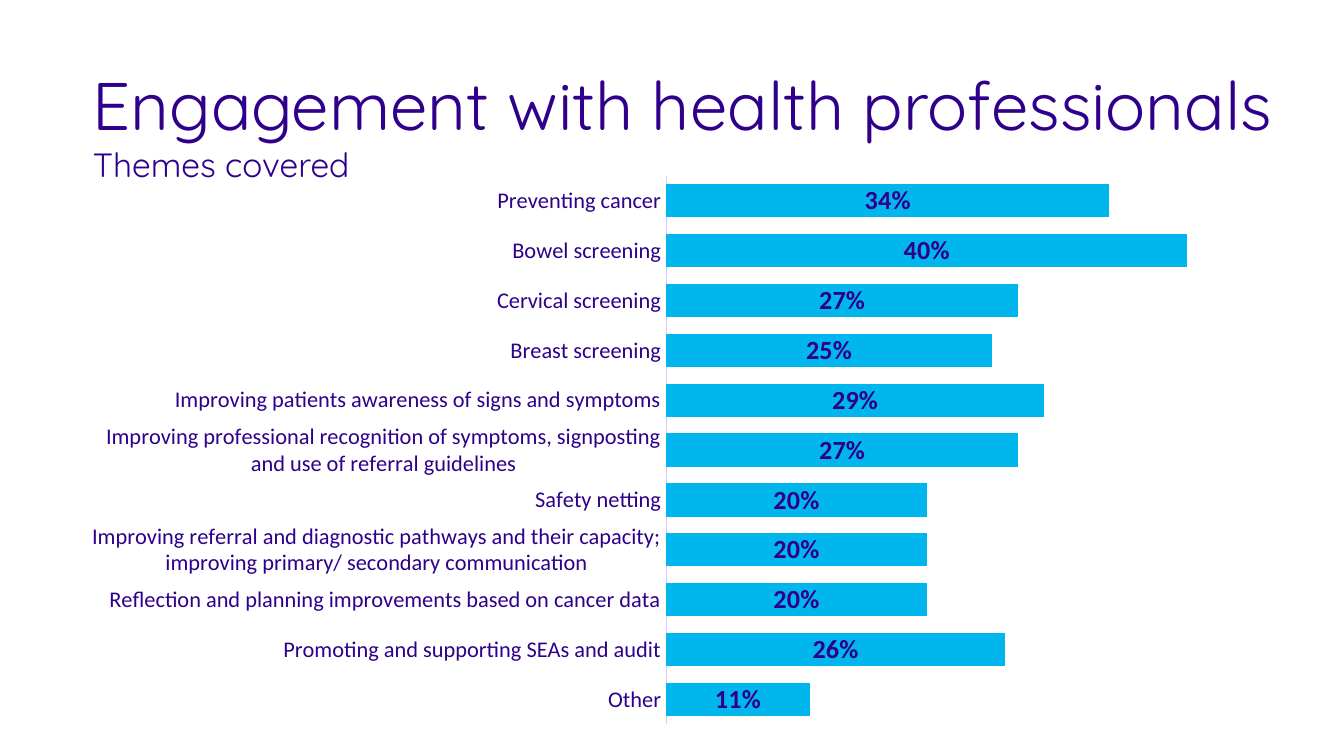
import pptx
import pptx.chart.data
import pptx.dml.color
import pptx.enum.chart
import pptx.enum.text
import pptx.oxml
import pptx.oxml.ns
import pptx.util
from dataclasses import dataclass
from pptx.util import Inches


@dataclass(frozen=True)
class Theme:
    ink: str = "2E008B"
    bar: str = "00B6ED"
    axis: str = "DAC7FF"
    heading_font: str = "Quicksand"
    chart_font: str = "Calibri"
    heading_size: int = 36
    subheading_size: int = 18
    chart_size: int = 11
    category_size: int = 12
    value_size: int = 14


theme = Theme()


def rgb(value):
    return pptx.dml.color.RGBColor.from_string(value)


def style_font(font, name, size, bold=False):
    font.name = name
    font.size = pptx.util.Pt(size)
    font.bold = bold
    font.color.rgb = rgb(theme.ink)


theme_shares = [
    ("Preventing cancer", 0.34),
    ("Bowel screening", 0.40),
    ("Cervical screening", 0.27),
    ("Breast screening", 0.25),
    ("Improving patients awareness of signs and symptoms", 0.29),
    ("Improving professional recognition of symptoms, signposting and use of referral guidelines", 0.27),
    ("Safety netting", 0.20),
    ("Improving referral and diagnostic pathways and their capacity; "
     "improving primary/ secondary communication", 0.20),
    ("Reflection and planning improvements based on cancer data", 0.20),
    ("Promoting and supporting SEAs and audit", 0.26),
    ("Other", 0.11),
]

# Widescreen slide, 16:9
deck = pptx.Presentation()
deck.slide_width = Inches(10)
deck.slide_height = Inches(10 * 9 / 16)
slide = deck.slides.add_slide(deck.slide_layouts[5])

# Heading: the smaller second part wraps onto its own line
heading = slide.shapes.title
heading.left, heading.top = Inches(0.59), Inches(0.42)
heading.width, heading.height = Inches(9.3), Inches(0.74)
frame = heading.text_frame
frame.word_wrap = True
frame.auto_size = pptx.enum.text.MSO_AUTO_SIZE.NONE
frame.vertical_anchor = pptx.enum.text.MSO_ANCHOR.TOP
frame.margin_top, frame.margin_bottom = Inches(0.05), 0
heading_line = frame.paragraphs[0]
heading_line.alignment = pptx.enum.text.PP_ALIGN.LEFT
heading_line.line_spacing = 1.0
for words, size in (
    ("Engagement with health professionals ", theme.heading_size),
    ("Themes covered", theme.subheading_size),
):
    run = heading_line.add_run()
    run.text = words
    style_font(run.font, theme.heading_font, size)

# Bar chart of themes
shares = pptx.chart.data.CategoryChartData(number_format="0%")
shares.categories = [name for name, share in theme_shares]
shares.add_series("Series 1", [share for name, share in theme_shares])
chart = slide.shapes.add_chart(
    pptx.enum.chart.XL_CHART_TYPE.BAR_CLUSTERED,
    Inches(0.59), Inches(1.15), Inches(8.37), Inches(4.4), shares,
).chart
chart.has_legend = False
chart.has_title = False
style_font(chart.font, theme.chart_font, theme.chart_size)

# Bars and their values
bars = chart.plots[0]
bars.gap_width = 50
bars.overlap = 50
bars.vary_by_categories = False
series = bars.series[0]
series.format.fill.solid()
series.format.fill.fore_color.rgb = rgb(theme.bar)
values = series.data_labels
values.show_value = True
values.number_format = "0%"
values.number_format_is_linked = False
values.position = pptx.enum.chart.XL_LABEL_POSITION.CENTER
style_font(values.font, theme.chart_font, theme.value_size, bold=True)

# Axes
themes_axis = chart.category_axis
themes_axis.reverse_order = True
themes_axis.has_major_gridlines = False
themes_axis.major_tick_mark = pptx.enum.chart.XL_TICK_MARK.NONE
themes_axis.format.line.color.rgb = rgb(theme.axis)
themes_axis.format.line.width = pptx.util.Pt(0.75)
style_font(themes_axis.tick_labels.font, theme.chart_font, theme.category_size)
share_axis = chart.value_axis
share_axis.minimum_scale, share_axis.maximum_scale = 0, 0.4
share_axis.has_major_gridlines = False
share_axis.visible = False

# Fixed plot area, leaving the left half for the theme names
plot_area = bars._element.getparent()
for old_layout in plot_area.findall(pptx.oxml.ns.qn("c:layout")):
    plot_area.remove(old_layout)
plot_area.insert(0, pptx.oxml.parse_xml(
    f'<c:layout {pptx.oxml.ns.nsdecls("c")}><c:manualLayout>'
    '<c:layoutTarget val="inner"/><c:xMode val="edge"/><c:yMode val="edge"/>'
    '<c:x val="0.522"/><c:y val="0.036"/><c:w val="0.463"/><c:h val="0.928"/>'
    '</c:manualLayout></c:layout>'
))

deck.save("out.pptx")
